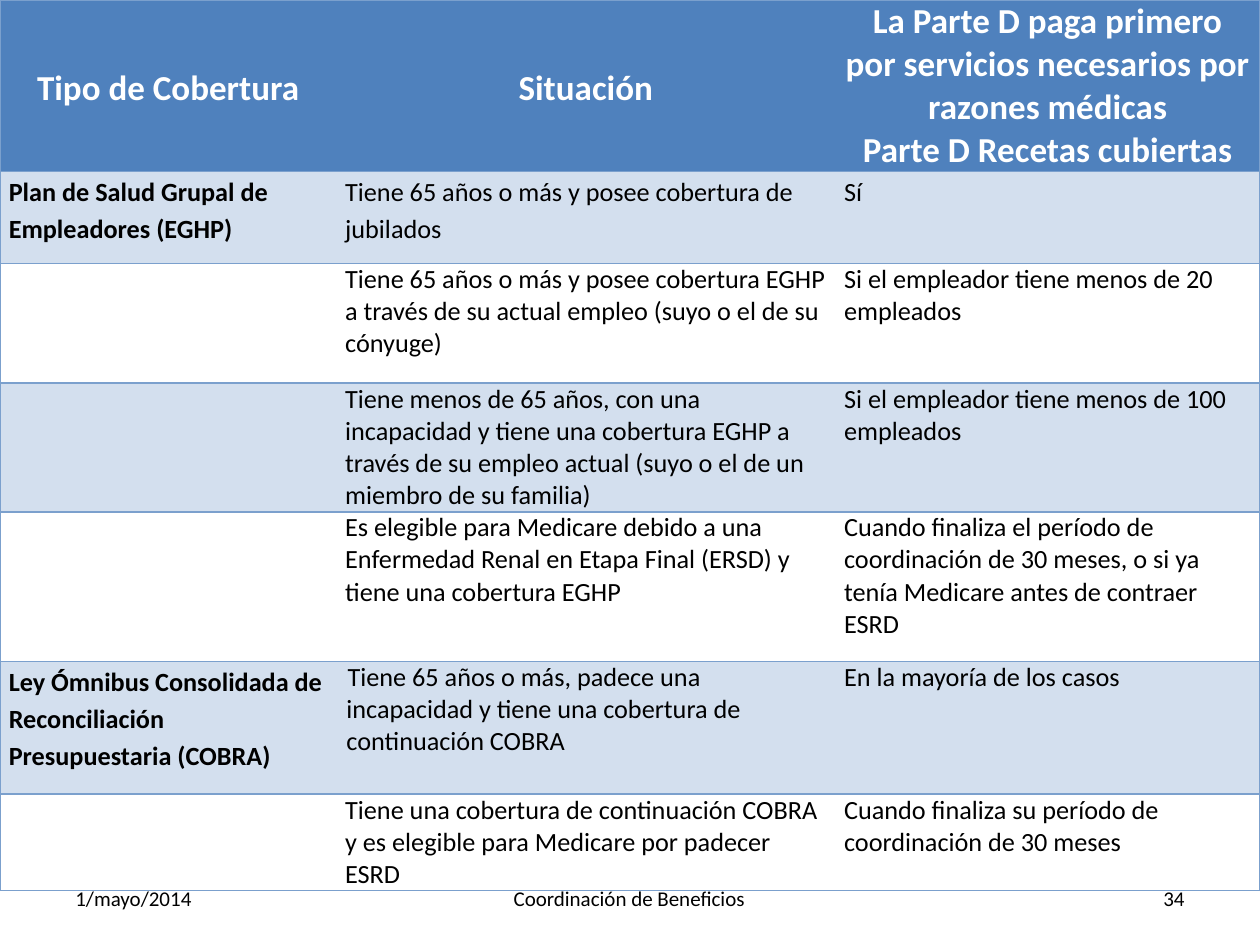
from lxml.etree import Element, SubElement
from pptx import Presentation
from pptx.dml.color import RGBColor
from pptx.enum.text import MSO_ANCHOR as Anchor, PP_ALIGN as Align
from pptx.oxml.ns import qn
from pptx.util import Inches, Pt

FONT = "Calibri"
WHITE = RGBColor(0xFF, 0xFF, 0xFF)
BLACK = RGBColor(0, 0, 0)
HEADER_BLUE = RGBColor(0x4F, 0x81, 0xBD)
BAND_BLUE = RGBColor(0xD3, 0xDF, 0xEE)
BORDER_BLUE = RGBColor(0x7B, 0xA0, 0xCD)

ROWS = [
    ("Tipo de Cobertura", "Situación",
     "La Parte D paga primero por servicios necesarios por razones médicas\n"
     "Parte D Recetas cubiertas"),
    ("Plan de Salud Grupal de Empleadores (EGHP)",
     "Tiene 65 años o más y posee cobertura de jubilados", "Sí"),
    ("", "Tiene 65 años o más y posee cobertura EGHP a través de su actual empleo "
     "(suyo o el de su cónyuge)",
     "Si el empleador tiene menos de 20 empleados"),
    ("", "Tiene menos de 65 años, con una incapacidad y tiene una cobertura EGHP "
     "a través de su empleo actual (suyo o el de un miembro de su familia)",
     "Si el empleador tiene menos de 100 empleados"),
    ("", "Es elegible para Medicare debido a una Enfermedad Renal en Etapa Final "
     "(ERSD) y tiene una cobertura EGHP",
     "Cuando finaliza el período de coordinación de 30 meses, o si ya tenía "
     "Medicare antes de contraer ESRD"),
    ("Ley Ómnibus Consolidada de Reconciliación Presupuestaria (COBRA)",
     "Tiene 65 años o más, padece una incapacidad y tiene una cobertura de "
     "continuación COBRA",
     "En la mayoría de los casos"),
    ("", "Tiene una cobertura de continuación COBRA y es elegible para Medicare "
     "por padecer ESRD",
     "Cuando finaliza su período de coordinación de 30 meses"),
]
COLUMN_WIDTHS = [2.67, 3.96, 3.37]
ROW_HEIGHTS = [1.08, 0.73, 0.95, 0.95, 1.19, 1.05, 0.59]
WIDE_SPACED = {(0, 0), (0, 1), (1, 0), (1, 1), (1, 2), (5, 0)}
INDENTED = (5, 1)

FOOTER = [
    ("1/mayo/2014", 0.5, 2.33, Align.LEFT),
    ("Coordinación de Beneficios", 2.83, 4.33, Align.CENTER),
    ("34", 7.17, 2.33, Align.RIGHT),
]


def set_font(paragraph, size, color, bold=False):
    for run in paragraph.runs:
        run.font.name = FONT
        run.font.size = Pt(size)
        run.font.bold = bold
        run.font.color.rgb = color


def set_borders(cell, visible):
    """Draw the sides named in visible (L, R, T, B) and clear the others."""
    properties = cell._tc.get_or_add_tcPr()
    for position, side in enumerate("LRTB"):
        line = Element(qn(f"a:ln{side}"), w=str(Pt(1)))
        if side in visible:
            fill = SubElement(line, qn("a:solidFill"))
            SubElement(fill, qn("a:srgbClr"), val=str(BORDER_BLUE))
        else:
            SubElement(line, qn("a:noFill"))
        properties.insert(position, line)


def style_cell(cell, row, column):
    header = row == 0
    if header or row % 2:
        cell.fill.solid()
        cell.fill.fore_color.rgb = HEADER_BLUE if header else BAND_BLUE
    else:
        cell.fill.background()
    cell.margin_left = cell.margin_right = Inches(0.07)
    cell.margin_top = cell.margin_bottom = 0
    cell.vertical_anchor = Anchor.MIDDLE if header else Anchor.TOP
    set_borders(cell, "TB" + {0: "L", 2: "R"}.get(column, ""))

    for paragraph in cell.text_frame.paragraphs:
        if header:
            paragraph.alignment = Align.CENTER
        if (row, column) in WIDE_SPACED:
            paragraph.line_spacing = 1.15
        elif not header and column:
            paragraph.space_after = Pt(6)
        if (row, column) == INDENTED:
            properties = paragraph._p.get_or_add_pPr()
            properties.set("marL", str(Inches(0.01)))
            properties.set("indent", str(Inches(0.01)))
        set_font(paragraph, 20 if header else 15, WHITE if header else BLACK,
                 bold=header or column == 0)


def add_coverage_table(slide):
    frame = slide.shapes.add_table(len(ROWS), len(COLUMN_WIDTHS),
                                   0, 0, Inches(10), Inches(7))
    table = frame.table
    for column, width in zip(table.columns, COLUMN_WIDTHS):
        column.width = Inches(width)
    for row, height in zip(table.rows, ROW_HEIGHTS):
        row.height = Inches(height)
    frame.height = Inches(7)
    for row, texts in enumerate(ROWS):
        for column, text in enumerate(texts):
            cell = table.cell(row, column)
            if text:
                cell.text_frame.text = text
            style_cell(cell, row, column)


def add_footer(slide):
    for text, left, width, alignment in FOOTER:
        box = slide.shapes.add_textbox(Inches(left), Inches(6.93),
                                       Inches(width), Inches(0.4))
        box.text_frame.word_wrap = True
        box.text_frame.vertical_anchor = Anchor.MIDDLE
        box.text_frame.text = text
        paragraph = box.text_frame.paragraphs[0]
        paragraph.alignment = alignment
        set_font(paragraph, 12, BLACK)


def main():
    presentation = Presentation()
    presentation.slide_width = Inches(10)
    presentation.slide_height = Inches(7.5)
    slide = presentation.slides.add_slide(presentation.slide_layouts[6])
    add_coverage_table(slide)
    add_footer(slide)
    presentation.save("out.pptx")


if __name__ == "__main__":
    main()
